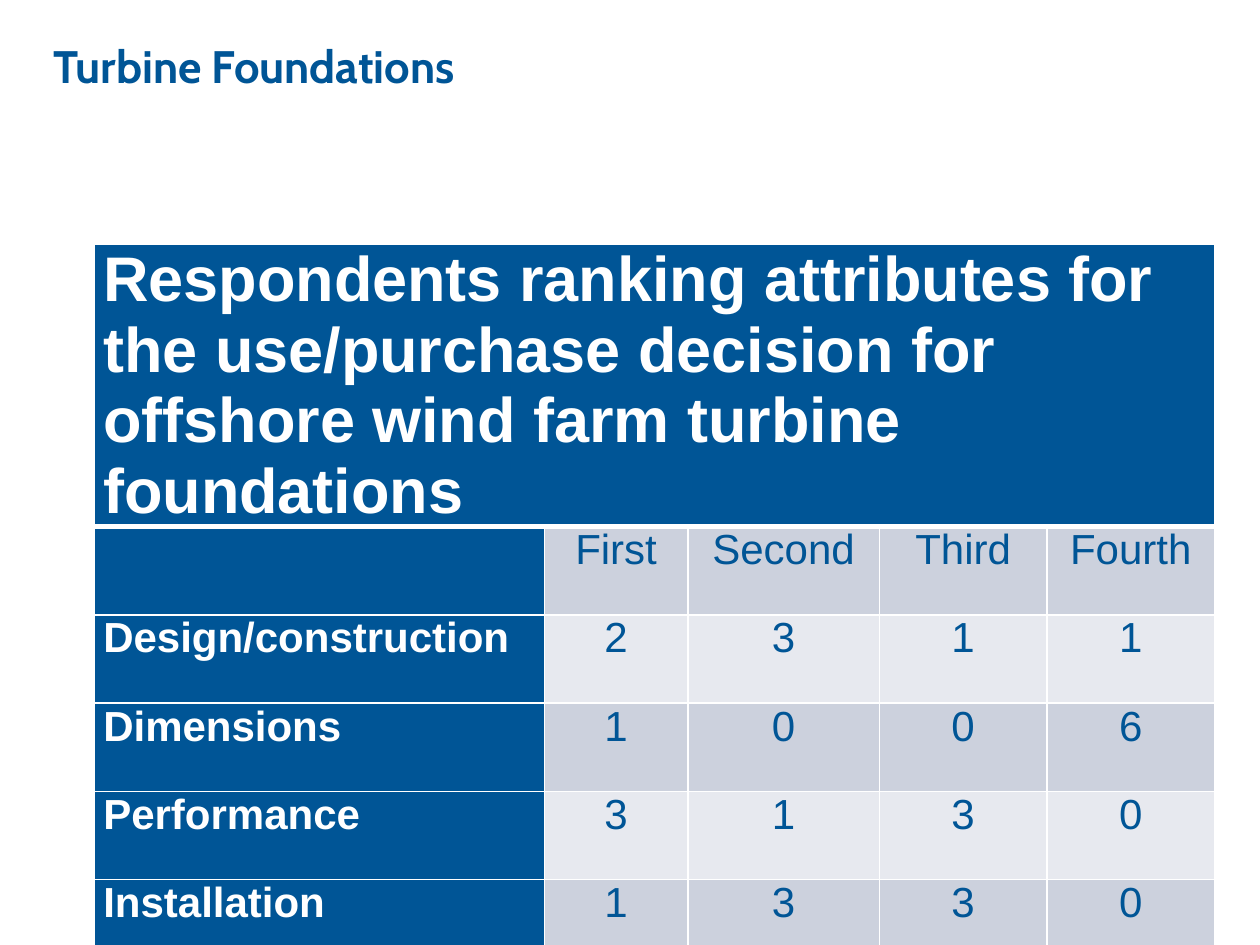
"""Build the turbine foundations slide with its ranking table."""
from lxml import etree
from pptx import Presentation
from pptx import util as u
from pptx.dml.color import RGBColor
from pptx.enum import text
from pptx.oxml import ns

BLUE = RGBColor(0x00, 0x55, 0x96)
WHITE = RGBColor(0xFF, 0xFF, 0xFF)
DARK_BAND = RGBColor(0xCC, 0xD1, 0xDD)
LIGHT_BAND = RGBColor(0xE7, 0xE9, 0xEF)

HEADING = ("Respondents ranking attributes for the use/purchase decision "
           "for offshore wind farm turbine foundations")
RANKINGS = [
    ("", "First", "Second", "Third", "Fourth"),
    ("Design/construction", 2, 3, 1, 1),
    ("Dimensions", 1, 0, 0, 6),
    ("Performance", 3, 1, 3, 0),
    ("Installation", 1, 3, 3, 0),
]
COLUMN_WIDTHS = [3.57, 1.14, 1.52, 1.33, 1.33]
HEADING_HEIGHT = 1.69
ROW_HEIGHT = 0.7


def write_text(frame, content, size=24, font="Arial", color=BLUE, bold=False,
               align=text.PP_ALIGN.LEFT):
    paragraph = frame.paragraphs[0]
    paragraph.alignment = align
    run = paragraph.add_run()
    run.text = content
    run.font.size = u.Pt(size)
    run.font.name = font
    run.font.bold = bold
    run.font.color.rgb = color


def add_title(slide, content):
    shape = slide.shapes.add_textbox(u.Inches(0.33), u.Inches(0.25),
                                     u.Inches(8.75), u.Inches(0.65))
    shape.text_frame.word_wrap = True
    write_text(shape.text_frame, content, size=26, font="Cabin", bold=True)


def add_border(cell, side, points):
    properties = cell._tc.get_or_add_tcPr()
    line = etree.SubElement(properties, ns.qn(f"a:ln{side}"), w=str(u.Pt(points)))
    fill = etree.SubElement(line, ns.qn("a:solidFill"))
    etree.SubElement(fill, ns.qn("a:srgbClr"), val=str(WHITE))


def style_cell(cell, fill, top=1, bottom=1):
    cell.margin_left = cell.margin_right = u.Inches(0.07)
    cell.margin_top = cell.margin_bottom = 0
    for side, points in (("L", 1), ("R", 1), ("T", top), ("B", bottom)):
        add_border(cell, side, points)
    cell.fill.solid()
    cell.fill.fore_color.rgb = fill


def add_ranking_table(slide):
    height = HEADING_HEIGHT + ROW_HEIGHT * len(RANKINGS)
    frame = slide.shapes.add_table(
        len(RANKINGS) + 1, len(COLUMN_WIDTHS), u.Inches(0.75), u.Inches(1.94),
        u.Inches(sum(COLUMN_WIDTHS)), u.Inches(height))
    table = frame.table
    for column, width in zip(table.columns, COLUMN_WIDTHS):
        column.width = u.Inches(width)
    for row in table.rows:
        row.height = u.Inches(ROW_HEIGHT)
    table.rows[0].height = u.Inches(HEADING_HEIGHT)

    for cell in table.rows[0].cells:
        style_cell(cell, BLUE, bottom=3)
    heading = table.cell(0, 0)
    heading.merge(table.cell(0, len(COLUMN_WIDTHS) - 1))
    write_text(heading.text_frame, HEADING, size=36, color=WHITE, bold=True)

    for row_index, values in enumerate(RANKINGS, start=1):
        band = DARK_BAND if row_index % 2 else LIGHT_BAND
        for column_index, value in enumerate(values):
            cell = table.cell(row_index, column_index)
            is_label = column_index == 0
            style_cell(cell, BLUE if is_label else band,
                       top=3 if row_index == 1 else 1)
            if is_label and value:
                write_text(cell.text_frame, value, color=WHITE, bold=True)
            elif not is_label:
                write_text(cell.text_frame, str(value),
                           align=text.PP_ALIGN.CENTER)


def main():
    presentation = Presentation()
    presentation.slide_width = u.Inches(10)
    presentation.slide_height = u.Inches(7.5)
    slide = presentation.slides.add_slide(presentation.slide_layouts[6])
    add_ranking_table(slide)
    add_title(slide, "Turbine Foundations")
    presentation.save("out.pptx")


if __name__ == "__main__":
    main()
